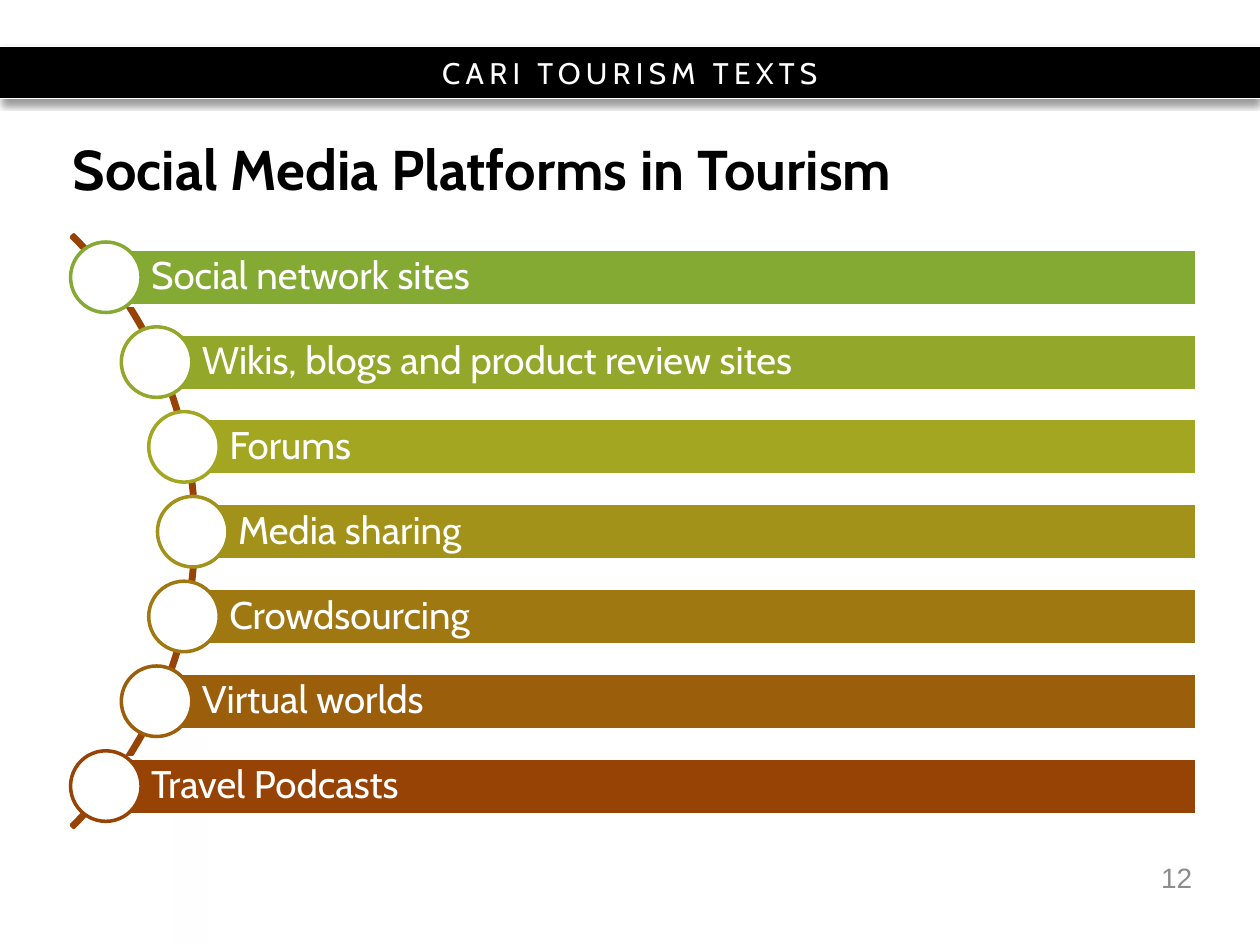
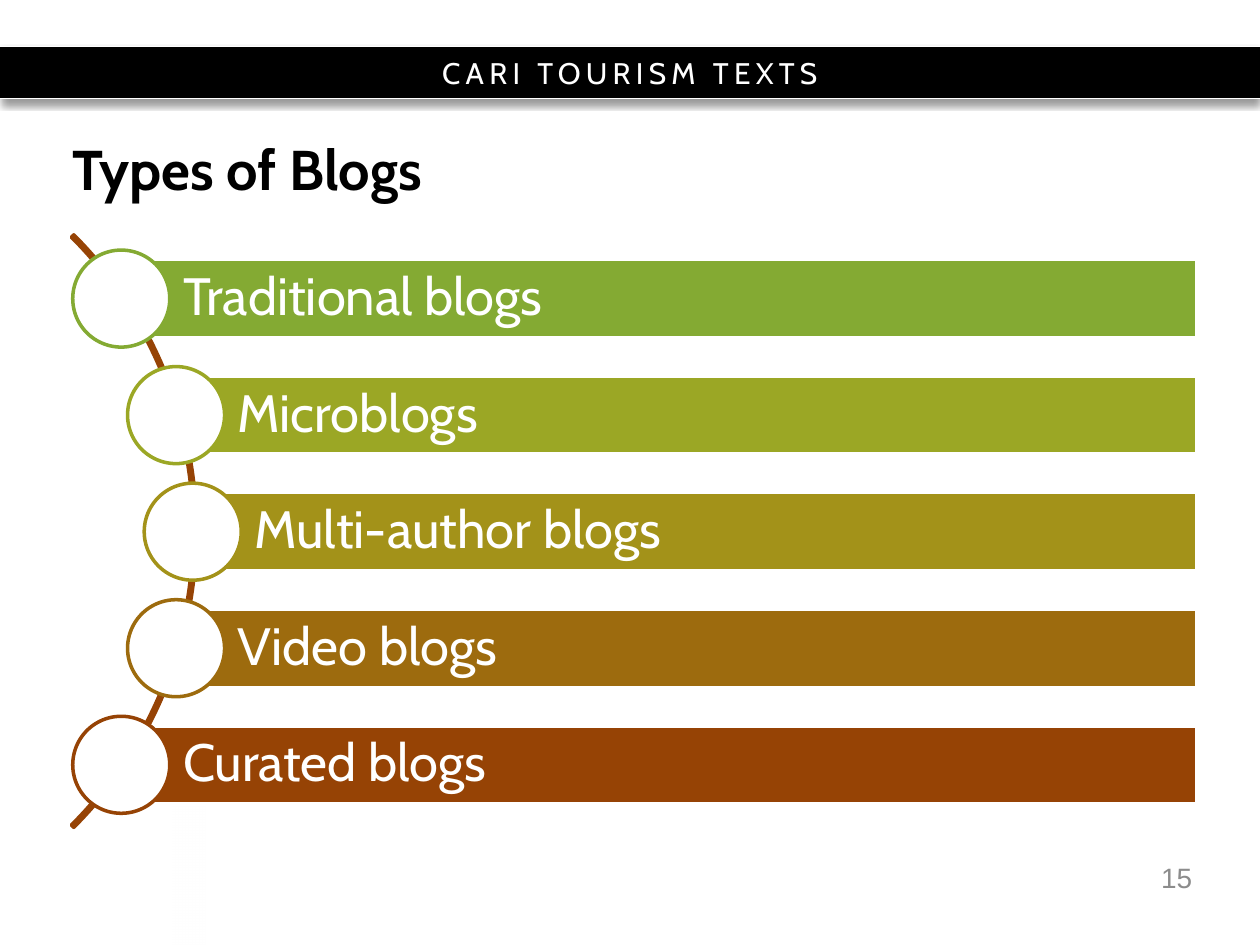
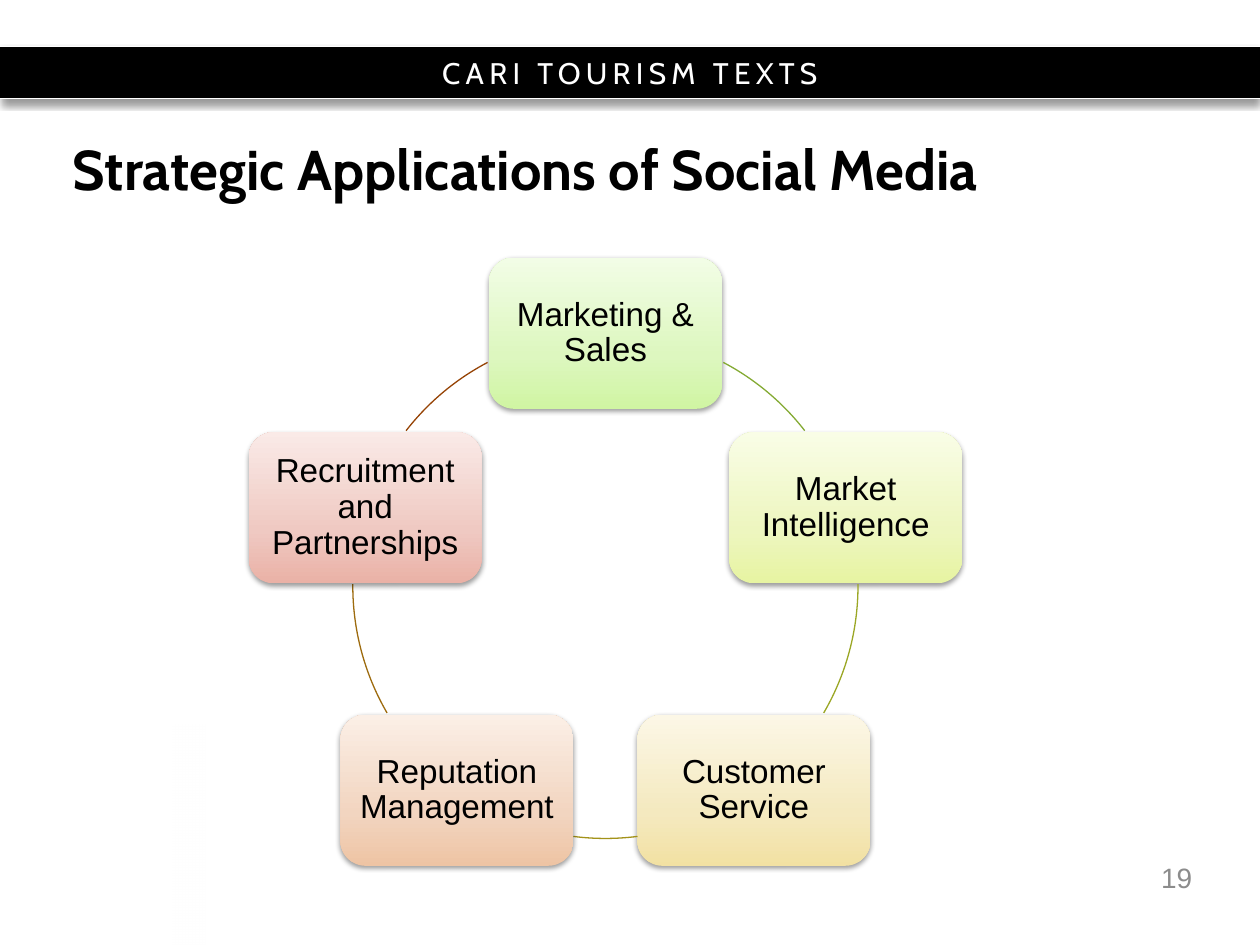
from dataclasses import dataclass
from math import cos, radians, sin, sqrt

from pptx import Presentation, util as u
from pptx.dml.color import RGBColor
from pptx.enum import shapes, text
from pptx.oxml import parse_xml
from pptx.oxml.ns import nsdecls, qn

Inches, Pt = u.Inches, u.Pt
KIND = shapes.MSO_SHAPE
ALIGN, ANCHOR = text.PP_ALIGN, text.MSO_ANCHOR


# Theme
@dataclass(frozen=True)
class Theme:
    heading_font: str = "Cabin"
    plain_font: str = "Arial"
    black: str = "000000"
    white: str = "FFFFFF"
    grey: str = "8C8C8C"
    rust: str = "964305"
    band_size: float = 17
    title_size: float = 32
    number_size: float = 16
    node_size: float = 19


THEME = Theme()


# Content types
@dataclass(frozen=True)
class Item:
    label: str
    color: str


@dataclass(frozen=True)
class CurvedList:
    title: str
    number: int
    items: list[Item]
    pitch: float
    bar_height: float
    circle_size: float
    text_inset: float
    margin: float
    text_size: float


@dataclass(frozen=True)
class Node:
    label: str
    gradient: tuple[str, str, str]
    arc_color: str
    arc_start: float
    arc_end: float


@dataclass(frozen=True)
class Shadow:
    alpha: float
    blur: float
    distance: float


@dataclass(frozen=True)
class Stop:
    position: float
    color: str
    alpha: float = 100


PLATFORMS = CurvedList(
    "Social Media Platforms in Tourism", 12,
    [Item("Social network sites", "84AA33"),
     Item("Wikis, blogs and product review sites", "93A82A"),
     Item("Forums", "A3A621"),
     Item("Media sharing", "A39219"),
     Item("Crowdsourcing", "A07811"),
     Item("Virtual worlds", "9B5E0B"),
     Item("Travel Podcasts", "964305")],
    pitch=0.673, bar_height=0.45, circle_size=0.56,
    text_inset=0.36, margin=0.06, text_size=22)

BLOGS = CurvedList(
    "Types of Blogs", 15,
    [Item("Traditional blogs", "84AA33"),
     Item("Microblogs", "9BA725"),
     Item("Multi-author blogs", "A39219"),
     Item("Video blogs", "9D6B0E"),
     Item("Curated blogs", "964305")],
    pitch=0.925, bar_height=0.62, circle_size=0.77,
    text_inset=0.49, margin=0.08, text_size=30)

APPLICATIONS = [
    Node("Marketing & Sales", ("D0F5A3", "DDF7BF", "F2FDE6"), "84AA33", 297.8, 322.1),
    Node("Market Intelligence", ("E7F4A2", "EDF6BF", "F9FDE6"), "9BA725", 359.6, 30.2),
    Node("Customer Service", ("F2E1A3", "F4E9BF", "FCF7E6"), "A39219", 82.7, 97.3),
    Node("Reputation Management", ("EEC4A4", "F2D5C0", "FBEFE6"), "9D6B0E", 149.8, 180.4),
    Node("Recruitment and Partnerships", ("EAB1A6", "EFC9C2", "FAEAE7"), "964305", 217.9, 242.2),
]


# Drawing helpers
def write(shape, content: str, *, size: float, font: str = THEME.heading_font,
          color: str = THEME.black, bold: bool = False, align=ALIGN.LEFT,
          line_spacing=None, tracking: float = 0,
          insets: tuple[float, float, float, float] = (0.1, 0.05, 0.1, 0.05)) -> None:
    """Put one formatted paragraph in a shape, centred vertically."""
    frame = shape.text_frame
    frame.word_wrap = True
    frame.vertical_anchor = ANCHOR.MIDDLE
    (frame.margin_left, frame.margin_top,
     frame.margin_right, frame.margin_bottom) = map(Inches, insets)
    paragraph = frame.paragraphs[0]
    paragraph.alignment = align
    if line_spacing:
        paragraph.line_spacing = line_spacing
    run = paragraph.add_run()
    run.text = content
    run.font.name, run.font.size, run.font.bold = font, Pt(size), bold
    run.font.color.rgb = RGBColor.from_string(color)
    if tracking:
        run.font._element.set("spc", str(round(tracking * 100)))


def add_text(slide, left: float, top: float, width: float, height: float,
             content: str, **style) -> None:
    box = slide.shapes.add_textbox(*map(Inches, (left, top, width, height)))
    write(box, content, **style)


def add_figure(slide, kind, left: float, top: float, width: float, height: float, *,
               fill: str | None = None, line: str | None = None, weight: float = 2):
    shape = slide.shapes.add_shape(kind, *map(Inches, (left, top, width, height)))
    shape.shadow.inherit = False
    if fill:
        shape.fill.solid()
        shape.fill.fore_color.rgb = RGBColor.from_string(fill)
    else:
        shape.fill.background()
    if line:
        shape.line.color.rgb = RGBColor.from_string(line)
        shape.line.width = Pt(weight)
    else:
        shape.line.fill.background()
    return shape


def add_shadow(shape, shadow: Shadow) -> None:
    effects = shape._element.spPr.find(qn("a:effectLst"))
    effects.append(parse_xml(
        f'<a:outerShdw {nsdecls("a")} blurRad="{Pt(shadow.blur)}" dist="{Pt(shadow.distance)}" '
        f'dir="5400000" rotWithShape="0"><a:srgbClr val="{THEME.black}">'
        f'<a:alpha val="{round(shadow.alpha * 1000)}"/></a:srgbClr></a:outerShdw>'))


def fill_gradient(shape, stops: list[Stop], angle: float) -> None:
    """Gradient fill; the angle runs counter-clockwise from left to right."""
    shape.fill.gradient()
    shape.fill.gradient_angle = angle
    gradient = shape._element.spPr.find(qn("a:gradFill"))
    entries = "".join(
        f'<a:gs pos="{round(stop.position * 1000)}"><a:srgbClr val="{stop.color}">'
        f'<a:alpha val="{round(stop.alpha * 1000)}"/></a:srgbClr></a:gs>' for stop in stops)
    gradient.replace(gradient.find(qn("a:gsLst")),
                     parse_xml(f'<a:gsLst {nsdecls("a")}>{entries}</a:gsLst>'))


def add_rule(slide, y: float) -> None:
    rule = slide.shapes.add_connector(shapes.MSO_CONNECTOR.STRAIGHT,
                                      Inches(0), Inches(y), Inches(10), Inches(y))
    rule.line.color.rgb = RGBColor.from_string(THEME.white)
    rule.line.width = Pt(0.75)
    rule._element.spPr.append(parse_xml(f'<a:effectLst {nsdecls("a")}/>'))


# Shared frame: band, fading strip, title and slide number
def add_slide(presentation, title: str, number: int):
    slide = presentation.slides.add_slide(presentation.slide_layouts[6])
    band_top, band_height = 0.37, 0.41
    band = add_figure(slide, KIND.RECTANGLE, 0, band_top, 10, band_height, fill=THEME.black)
    add_shadow(band, Shadow(alpha=40, blur=4, distance=3))
    write(band, "CARI TOURISM TEXTS", size=THEME.band_size, color=THEME.white,
          align=ALIGN.CENTER, tracking=3)
    for y in (band_top, band_top + band_height):
        add_rule(slide, y)
    strip = add_figure(slide, KIND.RECTANGLE, 1.37, 5.75, 0.26, 1.75)
    fill_gradient(strip, [Stop(0, THEME.white, 0), Stop(100, THEME.white)], angle=0)
    add_text(slide, 0.48, 1.14, 9.08, 0.48, title, size=THEME.title_size,
             bold=True, line_spacing=Pt(32))
    add_text(slide, 7.23, 6.76, 2.33, 0.4, str(number), size=THEME.number_size,
             font=THEME.plain_font, color=THEME.grey, align=ALIGN.RIGHT)
    return slide


# Bars whose left ends follow a large circle
def add_curved_list(presentation, content: CurvedList) -> None:
    slide = add_slide(presentation, content.title, content.number)
    center_x, center_y, radius, right = -1.77, 4.22, 3.3, 9.5
    curve = add_figure(slide, KIND.BLOCK_ARC, -5.09, 0.89, 6.65, 6.65, line=THEME.rust)
    for index, value in enumerate((189, 27, 0.004)):
        curve.adjustments[index] = value

    middle = (len(content.items) - 1) / 2
    for index, item in enumerate(content.items):
        offset = (index - middle) * content.pitch
        x = center_x + sqrt(radius ** 2 - offset ** 2)
        y = center_y + offset
        bar = add_figure(slide, KIND.RECTANGLE, x, y - content.bar_height / 2,
                         right - x, content.bar_height, fill=item.color, line=THEME.white)
        margin = content.margin
        write(bar, item.label, size=content.text_size, color=THEME.white, line_spacing=0.9,
              insets=(content.text_inset, margin, margin, margin))
        size = content.circle_size
        add_figure(slide, KIND.OVAL, x - size / 2, y - size / 2, size, size,
                   fill=THEME.white, line=item.color)


# Boxes evenly spaced on a ring, joined by arcs
def add_cycle(presentation, title: str, number: int, nodes: list[Node]) -> None:
    slide = add_slide(presentation, title, number)
    center_x, center_y, radius = 4.805, 4.65, 2.005
    width, height = 1.85, 1.2
    for index, node in enumerate(nodes):
        angle = radians(360 / len(nodes) * index - 90)
        box = add_figure(slide, KIND.ROUNDED_RECTANGLE,
                         center_x + radius * cos(angle) - width / 2,
                         center_y + radius * sin(angle) - height / 2, width, height)
        stops = [Stop(position, color) for position, color in zip((0, 35, 100), node.gradient)]
        fill_gradient(box, stops, angle=90)
        add_shadow(box, Shadow(alpha=38, blur=3.1, distance=1.6))
        write(box, node.label, size=THEME.node_size, font=THEME.plain_font,
              align=ALIGN.CENTER, line_spacing=0.9, insets=(0.07, 0.08, 0.07, 0.08))
        arc = add_figure(slide, KIND.ARC, center_x - radius, center_y - radius,
                         2 * radius, 2 * radius, line=node.arc_color, weight=0.75)
        # One degree is 60000 units, and an adjustment of 1 is 100000
        arc.adjustments[0] = node.arc_start * 0.6
        arc.adjustments[1] = node.arc_end * 0.6


def main() -> None:
    presentation = Presentation()
    presentation.slide_width, presentation.slide_height = Inches(10), Inches(7.5)
    add_curved_list(presentation, PLATFORMS)
    add_curved_list(presentation, BLOGS)
    add_cycle(presentation, "Strategic Applications of Social Media", 19, APPLICATIONS)
    presentation.save("out.pptx")


if __name__ == "__main__":
    main()
